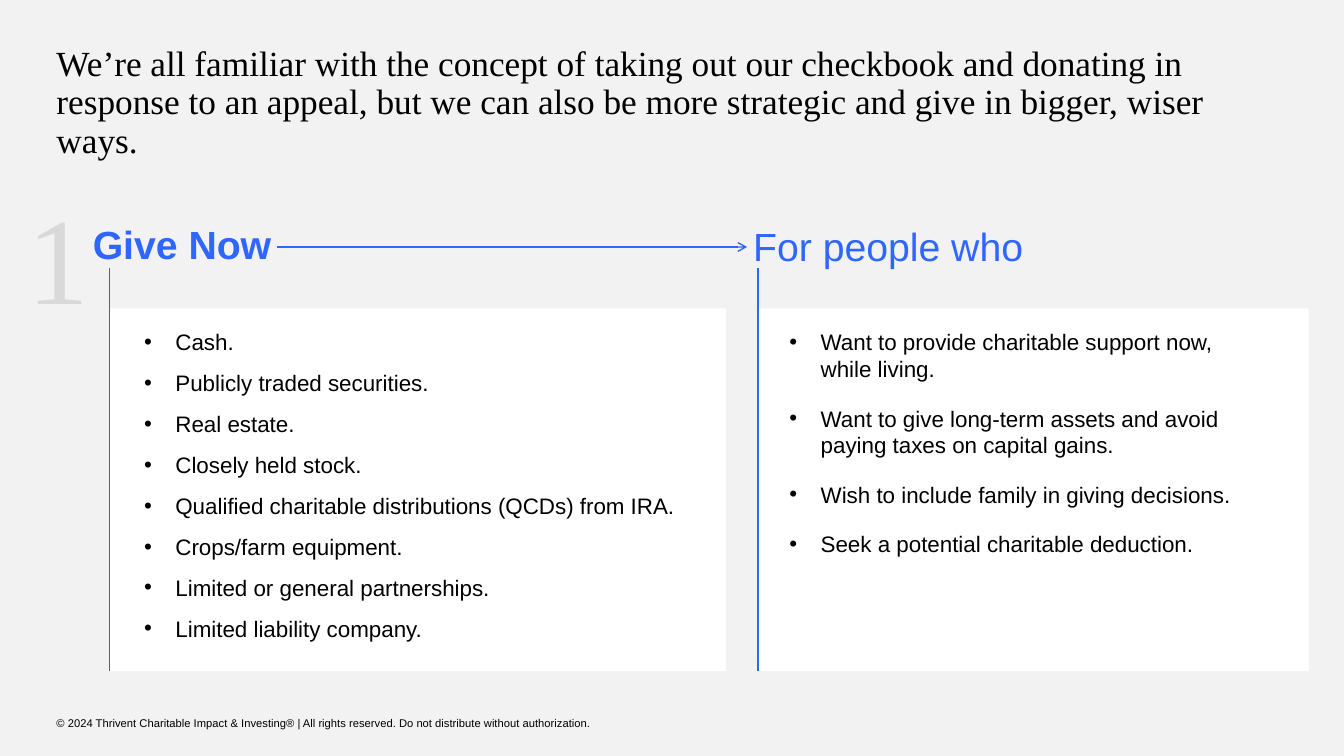
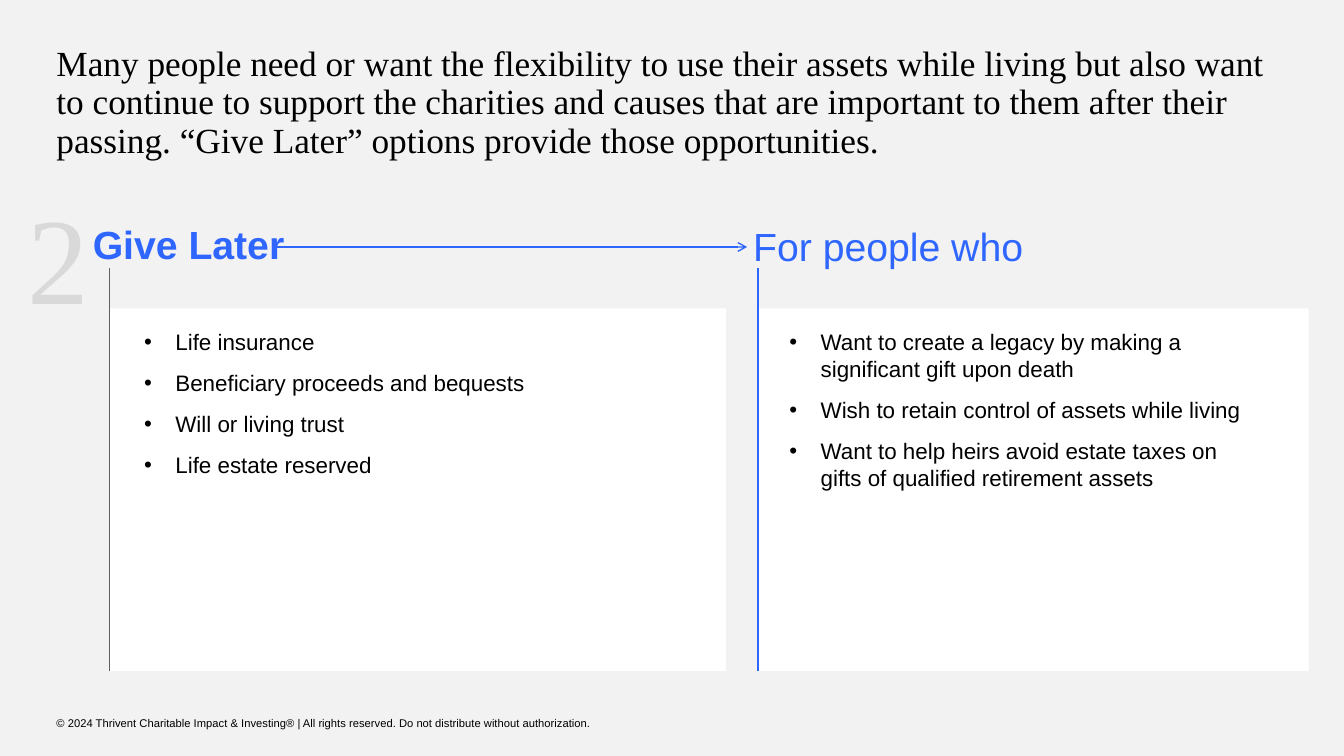
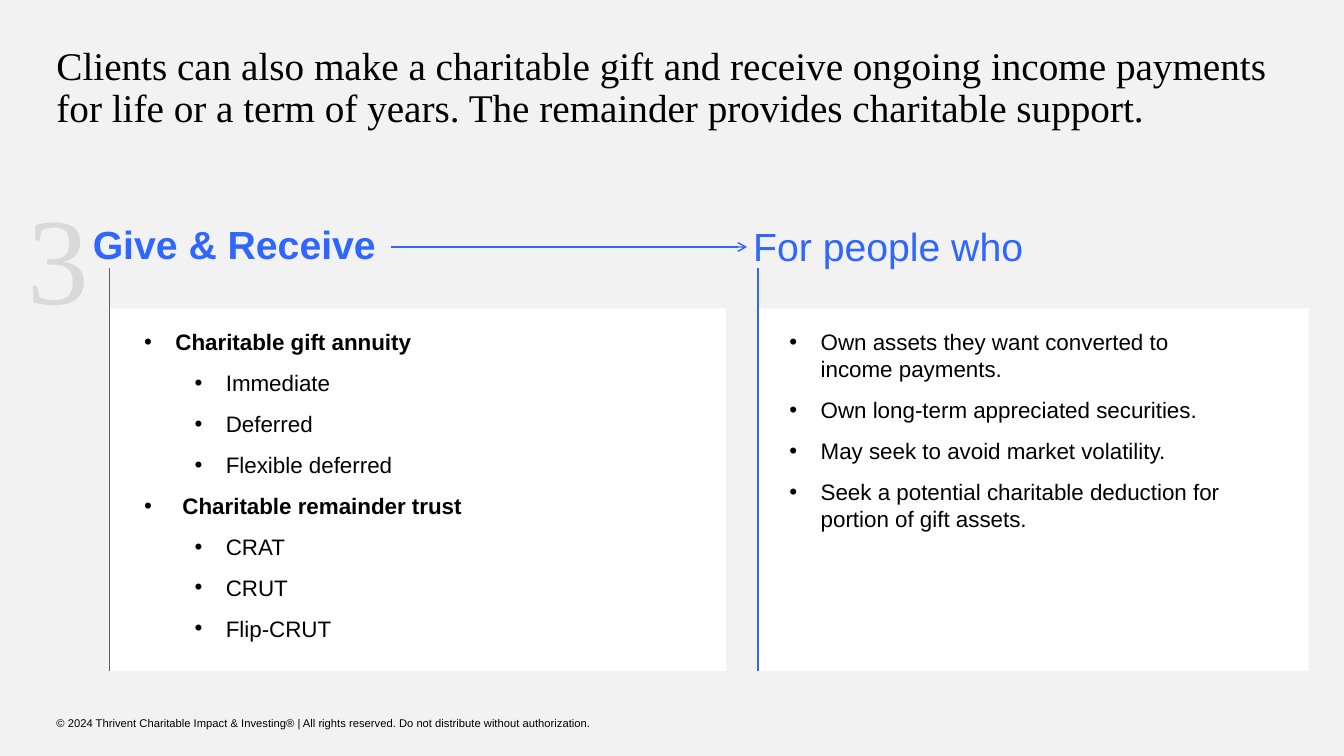
from pptx import Presentation
from pptx.dml.color import RGBColor
from pptx.enum.shapes import MSO_CONNECTOR, MSO_SHAPE
from pptx.enum.text import MSO_ANCHOR, MSO_AUTO_SIZE, PP_ALIGN
from pptx.oxml.ns import qn
from pptx.util import Inches, Pt
from lxml.etree import SubElement

BLACK = RGBColor(0x00, 0x00, 0x00)
WHITE = RGBColor(0xFF, 0xFF, 0xFF)
BLUE = RGBColor(0x2E, 0x66, 0xFF)
PALE = RGBColor(0xF2, 0xF2, 0xF2)
SILVER = RGBColor(0xD9, 0xD9, 0xD9)
GREY = RGBColor(0x60, 0x60, 0x60)
SANS, SERIF = "Arial", "Times New Roman"

MARGIN = 0.56
LEFT, RIGHT = 1.09, 7.52
CARD_WIDTHS = {LEFT: 6.11, RIGHT: 5.46}
RULE_COLORS = {LEFT: GREY, RIGHT: BLUE}
RULE_TOP, CARD_TOP, CARD_BOTTOM = 2.66, 3.06, 6.66
LIST_TOP = CARD_TOP + 0.15
ARROW_Y, ARROW_END = 2.45, 7.41
COPYRIGHT = ("© 2024 Thrivent Charitable Impact & Investing® | All rights reserved. "
             "Do not distribute without authorization.")

# List items are (level, text); level 0 items are bold when the list has sub-items.
SLIDES = [
    dict(
        title="We’re all familiar with the concept of taking out our checkbook and donating in "
              "response to an appeal, but we can also be more strategic and give in bigger, "
              "wiser ways.",
        title_size=25.2, heading="Give Now", arrow_start=2.75, reason_gap=6,
        gifts=[(0, "Cash."), (0, "Publicly traded securities."), (0, "Real estate."),
               (0, "Closely held stock."),
               (0, "Qualified charitable distributions (QCDs) from IRA."),
               (0, "Crops/farm equipment."), (0, "Limited or general partnerships."),
               (0, "Limited liability company.")],
        reasons=[(0, "Want to provide charitable support now, while living."),
                 (0, "Want to give long-term assets and avoid paying taxes on capital gains."),
                 (0, "Wish to include family in giving decisions."),
                 (0, "Seek a potential charitable deduction.")]),
    dict(
        title="Many people need or want the flexibility to use their assets while living but "
              "also want to continue to support the charities and causes that are important to "
              "them after their passing. “Give Later” options provide those opportunities.",
        title_size=25.2, heading="Give Later", arrow_start=2.75, reason_gap=0,
        gifts=[(0, "Life insurance"), (0, "Beneficiary proceeds and bequests"),
               (0, "Will or living trust"), (0, "Life estate reserved")],
        reasons=[(0, "Want to create a legacy by making a significant gift upon death"),
                 (0, "Wish to retain control of assets while living"),
                 (0, "Want to help heirs avoid estate taxes on gifts of qualified "
                     "retirement assets")]),
    dict(
        title="Clients can also make a charitable gift and receive ongoing income payments for "
              "life or a term of years. The remainder provides charitable support.",
        title_size=28, heading="Give & Receive", arrow_start=3.88, reason_gap=0,
        gifts=[(0, "Charitable gift annuity"), (1, "Immediate"), (1, "Deferred"),
               (1, "Flexible deferred"), (0, "Charitable remainder trust"),
               (1, "CRAT"), (1, "CRUT"), (1, "Flip-CRUT")],
        reasons=[(0, "Own assets they want converted to income payments."),
                 (0, "Own long-term appreciated securities."),
                 (0, "May seek to avoid market volatility."),
                 (0, "Seek a potential charitable deduction for portion of gift assets.")]),
]


def fill_box(box, at, items, size, font=SANS, color=BLACK, bold=False, inset=True,
             anchor=MSO_ANCHOR.TOP, spacing=1.0, before=0, after=0, bullets=False):
    """Place a text box or placeholder and write one paragraph per (level, text) item."""
    box.left, box.top, box.width, box.height = (Inches(length) for length in at)
    frame = box.text_frame
    frame.word_wrap = True
    frame.auto_size = MSO_AUTO_SIZE.NONE
    frame.vertical_anchor = anchor
    frame.margin_left = frame.margin_right = Inches(0.1 if inset else 0)
    frame.margin_top = frame.margin_bottom = Inches(0.05 if inset else 0)
    nested = any(level for level, _ in items)
    for index, (level, text) in enumerate(items):
        para = frame.add_paragraph() if index else frame.paragraphs[0]
        para.level = level
        para.alignment = PP_ALIGN.LEFT
        para.line_spacing = spacing
        para.space_before = Pt(before if index else 0)
        para.space_after = Pt(after)
        props = para._p.get_or_add_pPr()
        hanging = 0
        if bullets:
            hanging = 0.38 if nested and index and not level else 0.31
            SubElement(props, qn("a:buFont"), typeface=SANS)
            SubElement(props, qn("a:buChar"), char="•")
        else:
            SubElement(props, qn("a:buNone"))
        props.set("marL", str(Inches(hanging + level / 2)))
        props.set("indent", str(Inches(-hanging)))
        span = para.add_run()
        span.text = text
        span.font.name, span.font.size = font, Pt(size)
        span.font.bold = bold or (nested and level == 0)
        span.font.color.rgb = color


def draw_line(page, start, end, color, width=1.0, arrow=False):
    line = page.shapes.add_connector(MSO_CONNECTOR.STRAIGHT,
                                     *(Inches(length) for length in (*start, *end)))
    line.line.color.rgb = color
    line.line.width = Pt(width)
    if arrow:
        SubElement(line.line._get_or_add_ln(), qn("a:tailEnd"), type="arrow")
    SubElement(line._element.spPr, qn("a:effectLst"))


deck = Presentation()
deck.slide_width, deck.slide_height = Inches(13.33), Inches(7.5)
background = deck.slide_master.background.fill
background.solid()
background.fore_color.rgb = PALE
comparison = deck.slide_layouts.get_by_name("Comparison")

for number, content in enumerate(SLIDES, start=1):
    page = deck.slides.add_slide(comparison)
    title, heading, gifts, audience, reasons = page.placeholders

    for x, width in CARD_WIDTHS.items():
        card = page.shapes.add_shape(MSO_SHAPE.RECTANGLE, Inches(x), Inches(CARD_TOP),
                                     Inches(width), Inches(CARD_BOTTOM - CARD_TOP))
        card.shadow.inherit = False
        card.fill.solid()
        card.fill.fore_color.rgb = WHITE
        card.line.fill.background()
        page.shapes._spTree.insert(2, card._element)
        draw_line(page, (x, RULE_TOP), (x, CARD_BOTTOM), RULE_COLORS[x],
                  width=0.75 if x == LEFT else 1)
    draw_line(page, (content["arrow_start"], ARROW_Y), (ARROW_END, ARROW_Y), BLUE, arrow=True)

    fill_box(title, (MARGIN, 0.46, 12.22, 0.93), [(0, content["title"])],
             content["title_size"], font=SERIF, inset=False, spacing=0.9)
    fill_box(heading, (0.82, 2.19, 3.23, 0.4), [(0, content["heading"])], 28,
             color=BLUE, bold=True, spacing=0.9)
    fill_box(audience, (7.37, 2.16, 4.42, 0.57), [(0, "For people who")], 28, color=BLUE)
    fill_box(gifts, (LEFT + 0.24, LIST_TOP, 5.7, 3.24), content["gifts"], 16,
             after=10, bullets=True)
    fill_box(reasons, (RIGHT + 0.21, LIST_TOP, 4.71, 2.39), content["reasons"], 16,
             before=content["reason_gap"], after=10, bullets=True)

    numeral = page.shapes.add_textbox(0, 0, 0, 0)
    fill_box(numeral, (0.27, 1.8, 0.8, 1.41), [(0, str(number))], 88,
             font=SERIF, color=SILVER, inset=False)
    page.shapes._spTree.insert(2, numeral._element)
    footer = page.shapes.add_textbox(0, 0, 0, 0)
    fill_box(footer, (MARGIN, 7.09, 6.11, 0.16), [(0, COPYRIGHT)], 8,
             inset=False, anchor=MSO_ANCHOR.MIDDLE)

deck.save("out.pptx")
